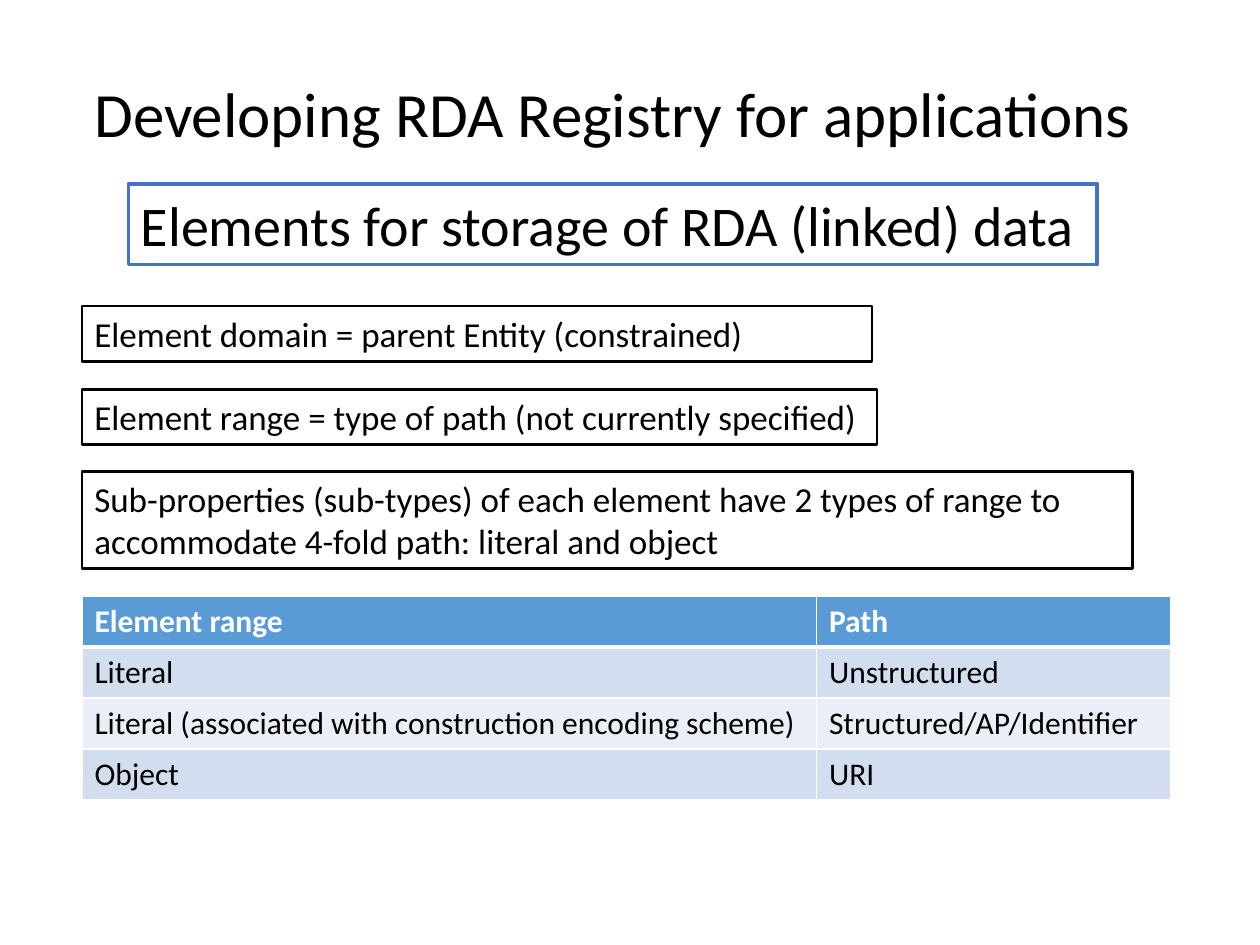
from lxml.etree import SubElement
from pptx import Presentation
from pptx.dml.color import RGBColor
from pptx.enum.text import MSO_AUTO_SIZE as AutoSize
from pptx.oxml.ns import qn
from pptx.util import Inches, Pt

FONT = "Calibri"
BLACK = RGBColor(0x00, 0x00, 0x00)
WHITE = RGBColor(0xFF, 0xFF, 0xFF)
FRAME_BLUE = RGBColor(0x44, 0x72, 0xC4)
HEADER_BLUE = RGBColor(0x5B, 0x9B, 0xD5)
BAND_DARK = RGBColor(0xD2, 0xDE, 0xEF)
BAND_LIGHT = RGBColor(0xEA, 0xEF, 0xF7)

LEFT = 0.65
STATEMENTS = [
    ("Element domain = parent Entity (constrained)", (LEFT, 2.43, 6.27, 0.44), True),
    ("Element range = type of path (not currently specified)", (LEFT, 3.09, 6.31, 0.44), False),
    ("Sub-properties (sub-types) of each element have 2 types of range to "
     "accommodate 4-fold path: literal and object", (LEFT, 3.74, 8.34, 0.77), True),
]
RANGE_PATHS = [
    ("Element range", "Path"),
    ("Literal", "Unstructured"),
    ("Literal (associated with construction encoding scheme)", "Structured/AP/Identifier"),
    ("Object", "URI"),
]


def add_span(para, text, size, color=BLACK, bold=False):
    """Add one formatted run to a paragraph."""
    span = para.add_run()
    span.text = text
    span.font.name = FONT
    span.font.size = Pt(size)
    span.font.bold = bold
    span.font.color.rgb = color


def add_text(page, text, place, size, wrap=False, outline=None, weight=1.5):
    """Place a text box, outlined when a colour is given."""
    box = page.shapes.add_textbox(*map(Inches, place))
    box.text_frame.word_wrap = wrap
    box.text_frame.auto_size = AutoSize.SHAPE_TO_FIT_TEXT
    if outline is not None:
        box.line.color.rgb = outline
        box.line.width = Pt(weight)
    add_span(box.text_frame.paragraphs[0], text, size)


def add_borders(cell, bottom):
    """Draw white cell borders with the given bottom width in points."""
    properties = cell._tc.get_or_add_tcPr()
    for side, width in (("L", 1), ("R", 1), ("T", 1), ("B", bottom)):
        line = SubElement(properties, qn(f"a:ln{side}"), w=str(Pt(width)))
        fill = SubElement(line, qn("a:solidFill"))
        SubElement(fill, qn("a:srgbClr"), val=str(WHITE))


def add_range_table(page, place, column_widths):
    """Place the table of element ranges and their paths."""
    frame = page.shapes.add_table(len(RANGE_PATHS), len(column_widths), *map(Inches, place))
    table = frame.table
    for column, width in zip(table.columns, column_widths):
        column.width = Inches(width)
    for row, texts in enumerate(RANGE_PATHS):
        header = row == 0
        band = HEADER_BLUE if header else (BAND_LIGHT, BAND_DARK)[row % 2]
        for col, text in enumerate(texts):
            cell = table.cell(row, col)
            add_borders(cell, 3 if header or row == 0 else 1)
            cell.fill.solid()
            cell.fill.fore_color.rgb = band
            add_span(cell.text_frame.paragraphs[0], text, 18,
                     WHITE if header else BLACK, header)


def build_slide(page):
    """Place the headings, the statements and the table."""
    add_text(page, "Developing RDA Registry for applications", (LEFT, 0.54, 8.51, 0.71), 36)
    add_text(page, "Elements for storage of RDA (linked) data", (1.02, 1.46, 7.69, 0.64), 32,
             outline=FRAME_BLUE, weight=2.25)
    for text, place, wrap in STATEMENTS:
        add_text(page, text, place, 20, wrap, BLACK)
    add_range_table(page, (LEFT, 4.73, 8.64, 1.62), (5.83, 2.81))


def main():
    """Build and save the deck."""
    deck = Presentation()
    deck.slide_width, deck.slide_height = Inches(10), Inches(7.5)
    build_slide(deck.slides.add_slide(deck.slide_layouts[6]))
    deck.save("out.pptx")


if __name__ == "__main__":
    main()
